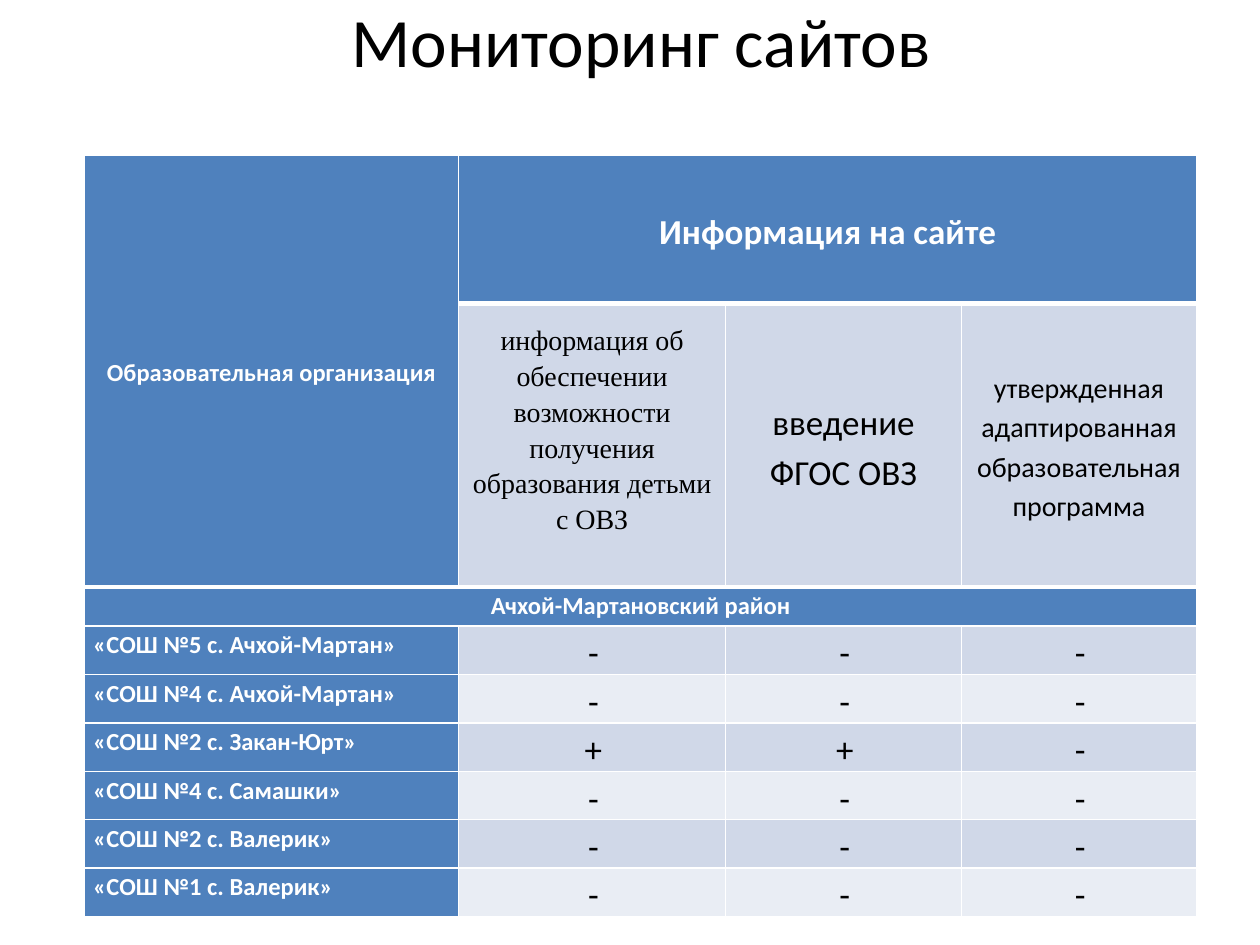
from pptx import Presentation
from pptx.dml.color import RGBColor
from pptx.enum.text import MSO_ANCHOR, PP_ALIGN
from pptx.oxml import parse_xml
from pptx.oxml.ns import nsdecls
from pptx.util import Inches, Pt

BLUE = RGBColor(0x4F, 0x81, 0xBD)
PALE = RGBColor(0xD0, 0xD8, 0xE8)
LIGHT = RGBColor(0xE9, 0xED, 0xF4)
WHITE = RGBColor(0xFF, 0xFF, 0xFF)
BLACK = RGBColor(0, 0, 0)

COLS = [2.97, 2.12, 1.87, 1.87]
HEADS = [1.18, 2.25, 0.31]
SCHOOLS = [
    ("«СОШ №5 с. Ачхой-Мартан»", "---"),
    ("«СОШ №4 с. Ачхой-Мартан»", "---"),
    ("«СОШ №2 с. Закан-Юрт»", "++-"),
    ("«СОШ №4 с. Самашки»", "---"),
    ("«СОШ №2 с. Валерик»", "---"),
    ("«СОШ №1 с. Валерик»", "---"),
]
ROWS = HEADS + [0.35] * len(SCHOOLS)


def write(frame, text, size, color, bold=False, font="Calibri", align=PP_ALIGN.CENTER):
    par = frame.paragraphs[0]
    par.alignment = align
    run = par.add_run()
    run.text = text
    run.font.size = Pt(size)
    run.font.name = font
    run.font.bold = bold
    run.font.color.rgb = color
    return par


def put(row, col, text, size, color=BLACK, **style):
    """Write one table cell; the two header rows are centred vertically."""
    cell = grid.cell(row, col)
    par = write(cell.text_frame, text, size, color, **style)
    par.line_spacing = 1.15
    cell.vertical_anchor = MSO_ANCHOR.MIDDLE if row < 2 else MSO_ANCHOR.TOP
    return cell


deck = Presentation()
deck.slide_width, deck.slide_height = Inches(10), Inches(7.5)
slide = deck.slides.add_slide(deck.slide_layouts[6])

# Title
title = slide.shapes.add_textbox(Inches(0.59), 0, Inches(9), Inches(0.63)).text_frame
title.word_wrap = True
title.vertical_anchor = MSO_ANCHOR.MIDDLE
write(title, "Мониторинг сайтов", 39.6, BLACK)

# Table grid
grid = slide.shapes.add_table(
    len(ROWS), len(COLS), Inches(0.67), Inches(1.23),
    Inches(sum(COLS)), Inches(sum(ROWS))).table
for col, width in zip(grid.columns, COLS):
    col.width = Inches(width)
for row, height in zip(grid.rows, ROWS):
    row.height = Inches(height)

# Fills, margins and white rules, thick below each header row
for r in range(len(ROWS)):
    for c in range(len(COLS)):
        cell = grid.cell(r, c)
        cell.margin_left = cell.margin_right = Inches(0.07)
        cell.margin_top = cell.margin_bottom = 0
        widths = {"L": 1, "R": 1, "T": 3 if r in (1, 2) else 1, "B": 3 if r < 2 else 1}
        for side, width in widths.items():
            cell._tc.get_or_add_tcPr().append(parse_xml(
                f'<a:ln{side} {nsdecls("a")} w="{Pt(width)}"><a:solidFill>'
                f'<a:srgbClr val="{WHITE}"/></a:solidFill></a:ln{side}>'))
        cell.fill.solid()
        if c == 0 or r in (0, 2):
            cell.fill.fore_color.rgb = BLUE
        else:
            cell.fill.fore_color.rgb = PALE if r % 2 else LIGHT

# Headings
grid.cell(0, 0).merge(grid.cell(1, 0))
grid.cell(0, 1).merge(grid.cell(0, 3))
grid.cell(2, 0).merge(grid.cell(2, 3))
put(0, 0, "Образовательная организация", 14, WHITE, bold=True)
put(0, 1, "Информация на сайте", 20, WHITE, bold=True)
info = put(1, 1, "информация об обеспечении возможности получения образования детьми с ОВЗ",
           16, font="Times New Roman")
info.margin_bottom = Inches(0.27)
put(1, 2, "введение ФГОС ОВЗ", 20)
put(1, 3, "утвержденная адаптированная образовательная программа", 16)
put(2, 0, "Ачхой-Мартановский район", 14, WHITE, bold=True)

# Schools
for r, (name, marks) in enumerate(SCHOOLS, len(HEADS)):
    put(r, 0, name, 14, WHITE, bold=True, align=PP_ALIGN.LEFT)
    for c, mark in enumerate(marks, 1):
        cell = put(r, c, mark, 20)
        cell.margin_left = Inches(0.09)

deck.save("out.pptx")
